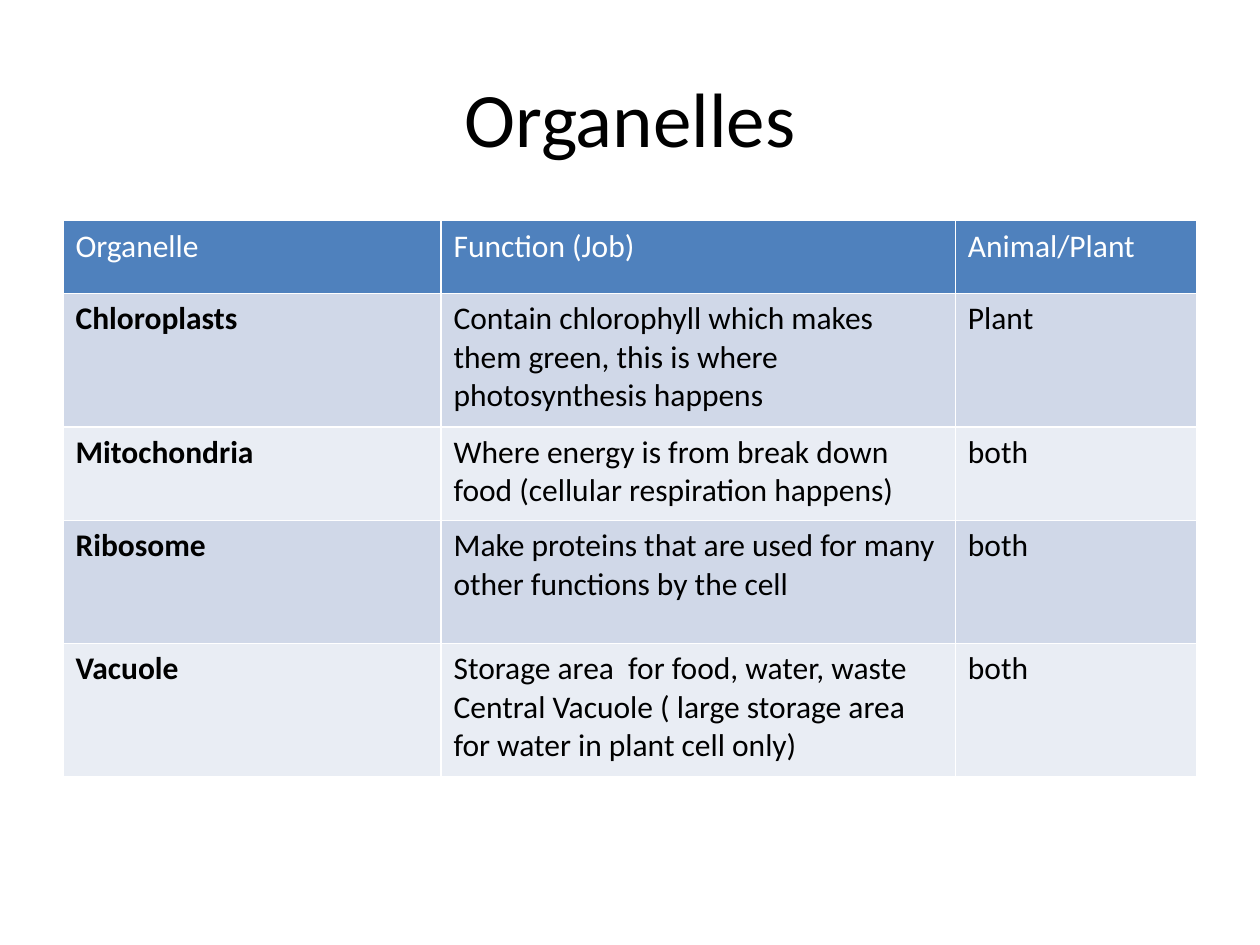
from collections import namedtuple
from dataclasses import dataclass

from lxml import etree
from pptx import Presentation
from pptx.dml.color import RGBColor
from pptx.enum import shapes, text
from pptx.oxml import ns
from pptx.util import Cm, Pt

Box = namedtuple("Box", "left top width height")


@dataclass(frozen=True)
class Theme:
    font: str = "Calibri"
    title_size: int = 44
    table_size: int = 18
    ink: str = "000000"
    paper: str = "FFFFFF"
    header: str = "4F81BD"
    bands: tuple = ("D0D8E8", "E9EDF4")
    line: float = 1


THEME = Theme()
COLUMN_WIDTHS = (7.62, 10.37, 4.87)
ROW_HEIGHTS = (1.47, 2.69, 1.88, 2.48, 2.69)
ORGANELLES = (
    ("Organelle", "Function (Job)", "Animal/Plant"),
    ("Chloroplasts",
     "Contain chlorophyll which makes them green, this is where photosynthesis happens",
     "Plant"),
    ("Mitochondria",
     "Where energy is from break down food (cellular respiration happens)",
     "both"),
    ("Ribosome",
     "Make proteins that are used for many other functions by the cell",
     "both"),
    ("Vacuole",
     "Storage area  for food, water, waste\n"
     "Central Vacuole ( large storage area for water in plant cell only)",
     "both"),
)


def set_fill(target, color):
    target.fill.solid()
    target.fill.fore_color.rgb = RGBColor.from_string(color)


def style_text(frame, size, color, bold=False):
    for para in frame.paragraphs:
        for span in para.runs:
            span.font.name = THEME.font
            span.font.size = Pt(size)
            span.font.bold = bold
            span.font.color.rgb = RGBColor.from_string(color)


def set_borders(cell):
    """Draw the four cell borders; they must precede the fill in the XML."""
    properties = cell._tc.get_or_add_tcPr()
    for position, tag in enumerate(("lnL", "lnR", "lnT", "lnB")):
        border = etree.Element(ns.qn(f"a:{tag}"), w=str(Pt(THEME.line)))
        fill = etree.SubElement(border, ns.qn("a:solidFill"))
        etree.SubElement(fill, ns.qn("a:srgbClr"), val=THEME.paper)
        properties.insert(position, border)


def add_title(page, box, title):
    title_box = page.shapes.add_shape(shapes.MSO_SHAPE.RECTANGLE, *box)
    title_box.shadow.inherit = False
    set_fill(title_box, THEME.paper)
    title_box.line.fill.background()
    frame = title_box.text_frame
    frame.word_wrap = True
    frame.vertical_anchor = text.MSO_ANCHOR.MIDDLE
    frame.text = title
    frame.paragraphs[0].alignment = text.PP_ALIGN.CENTER
    style_text(frame, THEME.title_size, THEME.ink)


def add_organelle_table(page, box):
    table = page.shapes.add_table(len(ORGANELLES), len(COLUMN_WIDTHS), *box).table
    for column, width in zip(table.columns, COLUMN_WIDTHS):
        column.width = Cm(width)
    for row, height in zip(table.rows, ROW_HEIGHTS):
        row.height = Cm(height)

    for r, values in enumerate(ORGANELLES):
        is_header = r == 0
        fill = THEME.header if is_header else THEME.bands[(r - 1) % 2]
        color = THEME.paper if is_header else THEME.ink
        for c, value in enumerate(values):
            cell = table.cell(r, c)
            cell.text_frame.text = value
            style_text(cell.text_frame, THEME.table_size, color,
                       bold=c == 0 and not is_header)
            set_fill(cell, fill)
            set_borders(cell)


def main():
    deck = Presentation()
    deck.slide_width, deck.slide_height = Cm(25.4), Cm(19.05)
    page = deck.slides.add_slide(deck.slide_layouts[6])

    # Title and table share the same side margins
    margin = Cm(1.27)
    width = deck.slide_width - 2 * margin
    add_title(page, Box(margin, Cm(0.76), width, Cm(3.18)), "Organelles")
    add_organelle_table(page, Box(margin, Cm(4.45), width, Cm(sum(ROW_HEIGHTS))))

    deck.save("out.pptx")


if __name__ == "__main__":
    main()
